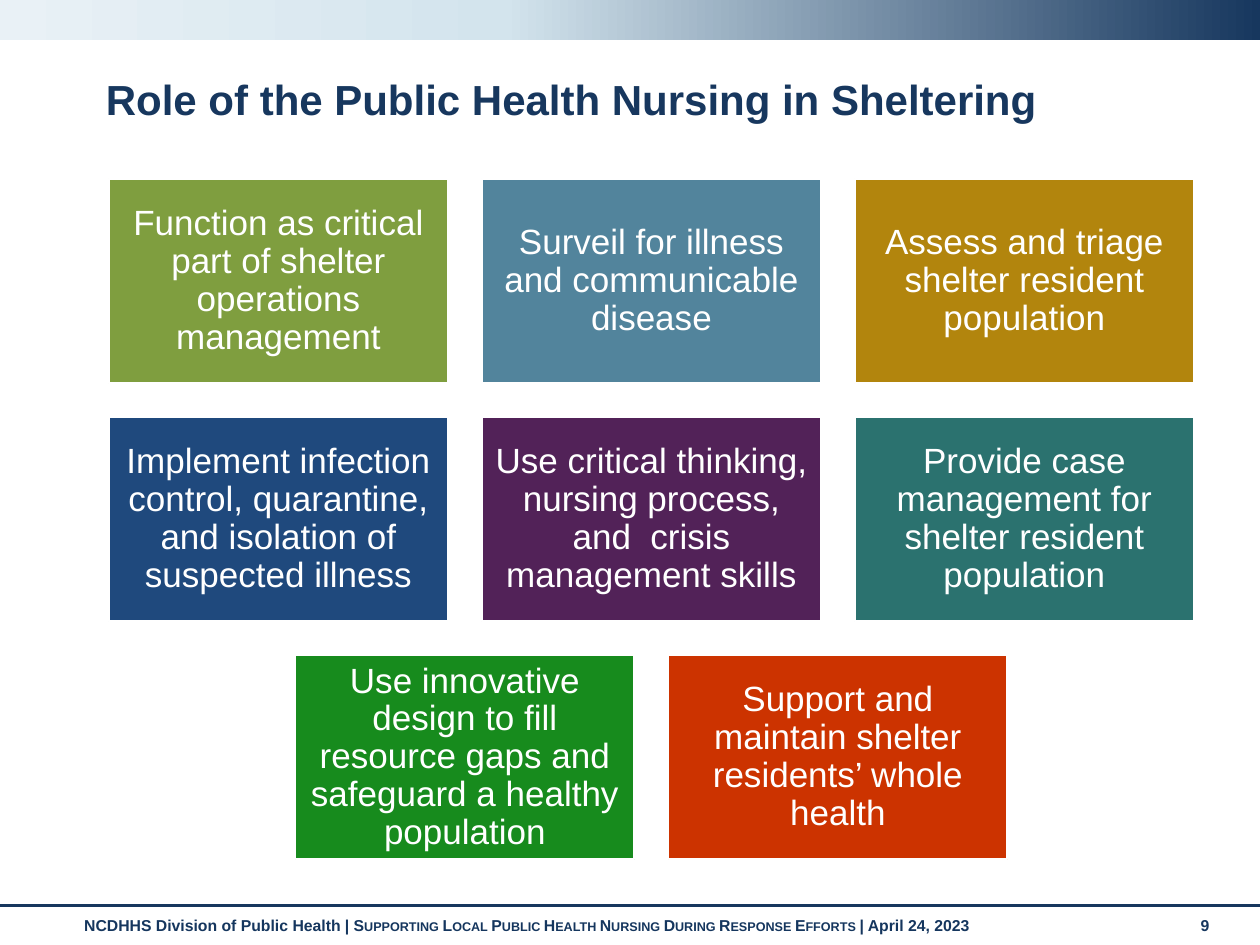
from copy import deepcopy
from dataclasses import dataclass

from pptx import Presentation
from pptx.dml.color import RGBColor
from pptx.enum.shapes import MSO_CONNECTOR, MSO_SHAPE
from pptx.enum.text import MSO_ANCHOR, MSO_AUTO_SIZE, PP_ALIGN
from pptx.oxml.ns import qn
from pptx.util import Inches, Pt


@dataclass(frozen=True)
class Theme:
    font: str = "Arial"
    navy: str = "17375E"
    footer: str = "15365E"
    white: str = "FFFFFF"
    band: tuple = ((0, "17375E"), (0.6, "D3E4ED"), (1, "E9F1F6"))
    title_size: int = 24
    tile_size: int = 20
    footer_size: int = 9


THEME = Theme()

# Tile wording and fill, row by row
ROLES = [
    [("Function as critical part of shelter operations management", "7F9E3F"),
     ("Surveil for illness and communicable disease", "52849C"),
     ("Assess and triage shelter resident population", "B2850D")],
    [("Implement infection control, quarantine, and isolation of suspected illness", "1F497D"),
     ("Use critical thinking, nursing process, and  crisis management skills", "522258"),
     ("Provide case management for shelter resident population", "2B726F")],
    [("Use innovative design to fill resource gaps and safeguard a healthy population", "178B1D"),
     ("Support and maintain shelter residents’ whole health", "CC3300")],
]
TILE_WIDTH, TILE_HEIGHT, TILE_GAP = 2.69, 1.62, 0.27
GRID_CENTER, GRID_TOP = 5.17, 1.42


def write(box, *parts, size, color, bold=False, align=PP_ALIGN.LEFT,
          anchor=MSO_ANCHOR.TOP, spacing=1.0, inset=None):
    """Fill a box with one paragraph; a part is (text, small_caps)."""
    frame = box.text_frame
    frame.word_wrap = True
    frame.auto_size = MSO_AUTO_SIZE.NONE
    frame.vertical_anchor = anchor
    if inset is not None:
        frame.margin_left = frame.margin_right = Inches(inset)
        frame.margin_top = frame.margin_bottom = Inches(inset)
    para = frame.paragraphs[0]
    para.alignment = align
    para.line_spacing = spacing
    for text, small_caps in parts:
        span = para.add_run()
        span.text = text
        span.font.name = THEME.font
        span.font.size = Pt(size)
        span.font.bold = bold
        span.font.color.rgb = RGBColor.from_string(color)
        if small_caps:
            span.font._element.set("cap", "small")


class Page:
    def __init__(self, deck, theme):
        self.theme = theme
        self.slide = deck.slides.add_slide(deck.slide_layouts[5])

    def rectangle(self, left, top, width, height):
        box = self.slide.shapes.add_shape(
            MSO_SHAPE.RECTANGLE, Inches(left), Inches(top), Inches(width), Inches(height))
        box.shadow.inherit = False
        return box

    def band(self, left, top, width, height):
        box = self.rectangle(left, top, width, height)
        box.line.fill.background()
        box.fill.gradient()
        box.fill.gradient_angle = 180
        # The default gradient has two stops; add the third
        stop_list = next(box._element.iter(qn("a:gsLst")))
        stop_list.append(deepcopy(stop_list[-1]))
        for stop, (position, color) in zip(box.fill.gradient_stops, self.theme.band):
            stop.position = position
            stop.color.rgb = RGBColor.from_string(color)

    def rule(self, left, right, top):
        line = self.slide.shapes.add_connector(
            MSO_CONNECTOR.STRAIGHT, Inches(left), Inches(top), Inches(right), Inches(top))
        line.line.color.rgb = RGBColor.from_string(self.theme.navy)
        line.line.width = Pt(1.75)
        properties = line._element.spPr
        properties.append(properties.makeelement(qn("a:effectLst"), {}))

    def title(self, text, left, top, width, height):
        box = self.slide.shapes.title
        box.left, box.top = Inches(left), Inches(top)
        box.width, box.height = Inches(width), Inches(height)
        write(box, (text, False), size=self.theme.title_size,
              color=self.theme.navy, bold=True, spacing=0.9)

    def footer(self, left, width, *parts):
        box = self.slide.shapes.add_textbox(
            Inches(left), Inches(7.22), Inches(width), Inches(0.3))
        write(box, *parts, size=self.theme.footer_size,
              color=self.theme.footer, bold=True)

    def tile(self, text, color, left, top):
        box = self.rectangle(left, top, TILE_WIDTH, TILE_HEIGHT)
        box.fill.solid()
        box.fill.fore_color.rgb = RGBColor.from_string(color)
        box.line.color.rgb = RGBColor.from_string(self.theme.white)
        box.line.width = Pt(1)
        write(box, (text, False), size=self.theme.tile_size, color=self.theme.white,
              align=PP_ALIGN.CENTER, anchor=MSO_ANCHOR.MIDDLE, spacing=0.9, inset=0.08)


def main():
    deck = Presentation()
    deck.slide_width, deck.slide_height = Inches(10), Inches(7.5)
    page = Page(deck, THEME)

    # Header band and footer
    page.band(0, 0, 10, 0.32)
    page.rule(0, 10, 7.19)
    page.footer(0.57, 8.74,
                ("NCDHHS Division of Public Health | ", False),
                ("Supporting Local Public Health Nursing During Response Efforts ", True),
                ("| April 24, 2023", False))
    page.footer(9.43, 0.44, ("9", False))

    # Title
    page.title("Role of the Public Health Nursing in Sheltering", 0.74, 0.58, 9.4, 0.9)

    # Role tiles, each row centred
    for row, roles in enumerate(ROLES):
        row_width = len(roles) * (TILE_WIDTH + TILE_GAP) - TILE_GAP
        for column, (text, color) in enumerate(roles):
            page.tile(text, color,
                      GRID_CENTER - row_width / 2 + column * (TILE_WIDTH + TILE_GAP),
                      GRID_TOP + row * (TILE_HEIGHT + TILE_GAP))

    deck.save("out.pptx")


if __name__ == "__main__":
    main()
